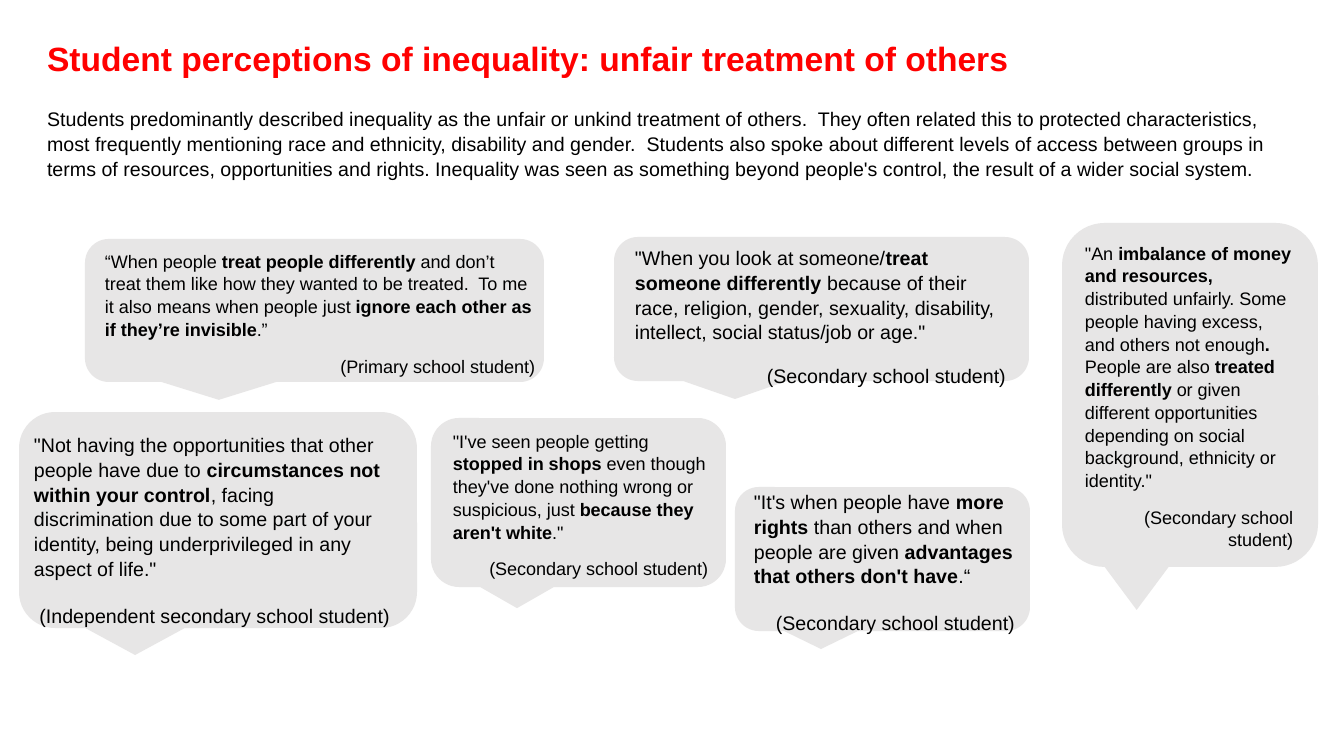
from pptx import Presentation
from pptx.dml.color import RGBColor
from pptx.enum.shapes import MSO_SHAPE as SHAPE
from pptx.enum.text import MSO_ANCHOR as ANCHOR, MSO_AUTO_SIZE as AUTO_SIZE, PP_ALIGN as ALIGN
from pptx.oxml.xmlchemy import OxmlElement
from pptx.util import Emu, Pt

EMU_PER_PX = 914400 / 100.8
FONT = "Arial"
RED, BLACK, GREY = "FF0000", "000000", "E7E6E6"
SECONDARY = "(Secondary school student)"

TITLE = "Student perceptions of inequality: unfair treatment of others"
INTRO = (
    "Students predominantly described inequality as the unfair or unkind treatment of others.  "
    "They often related this to protected characteristics, most frequently mentioning race and "
    "ethnicity, disability and gender.  Students also spoke about different levels of access "
    "between groups in terms of resources, opportunities and rights. Inequality was seen as "
    "something beyond people's control, the result of a wider social system."
)

# Callout area, text area, quote (** marks bold), speaker, format
QUOTES = [
    ((85, 239, 459, 143), (95, 244, 450, 139),
     "“When people **treat people differently** and don’t treat them like how they wanted to be "
     "treated.  To me it also means when people just **ignore each other as if they’re "
     "invisible**.”",
     "(Primary school student)", dict(size=12.9)),
    ((614, 237, 415, 144), (625, 240, 391, 137),
     '"When you look at someone/**treat someone differently** because of their race, religion, '
     'gender, sexuality, disability, intellect, social status/job or age."',
     SECONDARY, dict(size=14, after=6, speaker_spacing=0.9)),
    ((19, 412, 398, 216), (24, 427, 376, 211),
     '"Not having the opportunities that other people have due to** circumstances not within '
     'your control**, facing discrimination due to some part of your identity, being '
     'underprivileged in any aspect of life."',
     "(Independent secondary school student)", dict(size=14, after=6)),
    ((431, 418, 295, 169), (443, 424, 275, 160),
     '"I\'ve seen people getting **stopped in shops** even though they\'ve done nothing wrong or '
     'suspicious, just **because they aren\'t white**."',
     SECONDARY, dict(size=12.9)),
    ((735, 487, 295, 144), (744, 484, 281, 151),
     '"It\'s when people have **more rights **than others and when people are given **advantages '
     'that others don\'t have**.“',
     SECONDARY, dict(size=14, after=6)),
    ((1062, 223, 256, 344), (1075, 236, 228, 323),
     '"An **imbalance of money and resources,** distributed unfairly. Some people having excess, '
     'and others not enough**.** People are also **treated differently **or given different '
     'opportunities depending on social background, ethnicity or identity."',
     SECONDARY, dict(size=12.9)),
]


def px(length):
    return Emu(round(length * EMU_PER_PX))


def color(value):
    return RGBColor.from_string(value)


def place(shape, area):
    shape.left, shape.top, shape.width, shape.height = map(px, area)


def remove_bullet(para):
    properties = para._p.get_or_add_pPr()
    properties.set("marL", "0")
    properties.set("indent", "0")
    properties.append(OxmlElement("a:buNone"))


def write(para, text, size=14, fill=BLACK, bold=False, align=ALIGN.LEFT,
          spacing=1.05, before=0, after=0):
    """Fill a paragraph; each ** in the text switches bold on or off."""
    para.alignment = align
    para.line_spacing = spacing
    para.space_before, para.space_after = Pt(before), Pt(after)
    for index, part in enumerate(text.split("**")):
        span = para.add_run()
        span.text = part
        span.font.name = FONT
        span.font.size = Pt(size)
        span.font.bold = bold or index % 2 == 1
        span.font.color.rgb = color(fill)


def fill_placeholder(shape, area, text, anchor, **text_format):
    place(shape, area)
    frame = shape.text_frame
    frame.auto_size = AUTO_SIZE.NONE
    frame.vertical_anchor = anchor
    remove_bullet(frame.paragraphs[0])
    write(frame.paragraphs[0], text, **text_format)


def add_callout(page, area):
    callout = page.shapes.add_shape(SHAPE.ROUNDED_RECTANGULAR_CALLOUT, *map(px, area))
    callout.shadow.inherit = False
    callout.fill.solid()
    callout.fill.fore_color.rgb = color(GREY)
    callout.line.fill.background()


def add_quote(page, area, quote, speaker, size, after=0, speaker_spacing=1.05):
    box = page.shapes.add_textbox(*map(px, area))
    frame = box.text_frame
    frame.word_wrap = True
    write(frame.paragraphs[0], quote, size=size, after=after)
    write(frame.add_paragraph(), speaker, size=size, align=ALIGN.RIGHT,
          spacing=speaker_spacing, before=10)


def main():
    deck = Presentation()
    deck.slide_width, deck.slide_height = px(1344), px(756)
    page = deck.slides.add_slide(deck.slide_layouts[1])
    fill_placeholder(page.shapes.title, (37, 35, 1159, 52), TITLE, ANCHOR.MIDDLE,
                     size=24, fill=RED, bold=True, spacing=0.9)
    fill_placeholder(page.placeholders[1], (37, 101, 1246, 118), INTRO, ANCHOR.TOP)
    for callout_area, text_area, quote, speaker, text_format in QUOTES:
        add_callout(page, callout_area)
        add_quote(page, text_area, quote, speaker, **text_format)
    deck.save("out.pptx")


if __name__ == "__main__":
    main()
